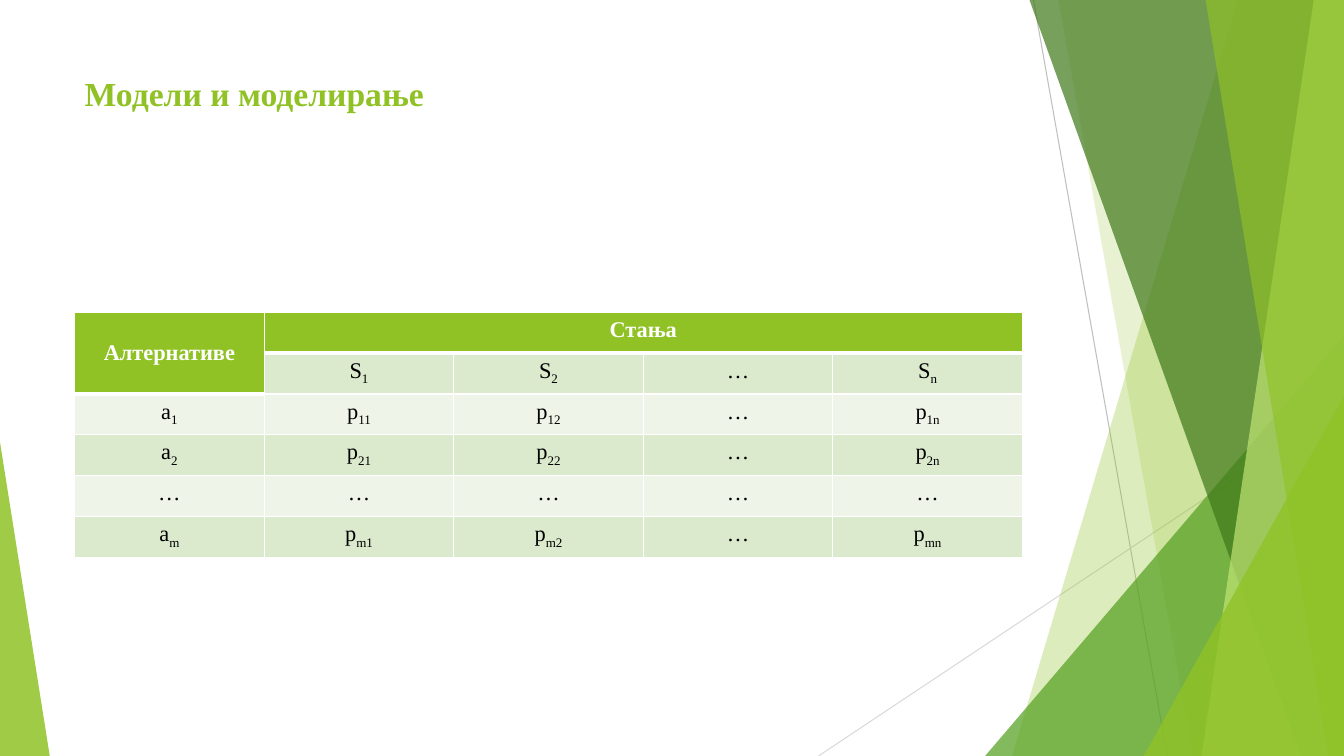
import pptx
import pptx.util
import pptx.dml.color
import pptx.enum.shapes
import pptx.enum.text
import pptx.oxml
import pptx.oxml.ns

RGBColor = pptx.dml.color.RGBColor
MSO_SHAPE = pptx.enum.shapes.MSO_SHAPE
PP_ALIGN = pptx.enum.text.PP_ALIGN
MSO_ANCHOR = pptx.enum.text.MSO_ANCHOR
Inches = pptx.util.Inches
Pt = pptx.util.Pt

LIME = RGBColor(0x90, 0xC2, 0x26)
PALE_LIME = RGBColor(0xC0, 0xE4, 0x74)
GREEN = RGBColor(0x54, 0xA0, 0x21)
DARK_GREEN = RGBColor(0x3F, 0x78, 0x19)
GREY = RGBColor(0xBF, 0xBF, 0xBF)
LIGHT_GREY = RGBColor(0xD9, 0xD9, 0xD9)
BAND_DARK = RGBColor(0xDB, 0xE9, 0xCD)
BAND_LIGHT = RGBColor(0xEE, 0xF4, 0xE8)
WHITE = RGBColor(0xFF, 0xFF, 0xFF)
BLACK = RGBColor(0, 0, 0)
FONT = "Times New Roman"

# An underscore separates a symbol from its index
PAYOFFS = [
    ["Алтернативе", "Стања", "", "", ""],
    ["", "S_1", "S_2", "…", "S_n"],
    ["а_1", "p_11", "p_12", "…", "p_1n"],
    ["а_2", "p_21", "p_22", "…", "p_2n"],
    ["…", "…", "…", "…", "…"],
    ["а_m", "p_m1", "p_m2", "…", "p_mn"],
]

# Decoration, in percent of the box
RAYS = [((76.9, 0), (86.85, 100), GREY), ((100, 53.7), (60.9, 100), LIGHT_GREY)]
BACK_BANDS = [(92.1, 75.3, LIME, 30), (78.75, 88.75, LIME, 20)]
FRONT_BANDS = [(76.6, 96.8, DARK_GREEN, 70), (97.75, 89.4, PALE_LIME, 70),
               (89.7, 98.85, LIME, 65)]


def subelement(parent, tag, **attributes):
    child = pptx.oxml.parse_xml(f"<{tag} {pptx.oxml.ns.nsdecls('a')}/>")
    for name, value in attributes.items():
        child.set(name, str(value))
    parent.append(child)
    return child


def paint(shape, color, opacity):
    shape.shadow.inherit = False
    shape.line.fill.background()
    shape.fill.solid()
    shape.fill.fore_color.rgb = color
    srgb = shape._element.spPr.find(".//" + pptx.oxml.ns.qn("a:srgbClr"))
    subelement(srgb, "a:alpha", val=opacity * 1000)


def add_text(paragraph, text, size, color, bold):
    """Write a symbol and, after an underscore, its index as a subscript."""
    for position, part in enumerate(text.split("_")):
        run = paragraph.add_run()
        run.text = part
        run.font.name = FONT
        run.font.size = Pt(size)
        run.font.bold = bold
        run.font.color.rgb = color
        if position:
            run._r.get_or_add_rPr().set("baseline", "-25000")


def draw_decoration(slide, left, top, width, height):
    def at(x, y):
        return int(left + width * x / 100), int(top + height * y / 100)

    def add_band(top_x, bottom_x, color, opacity):
        outline = slide.shapes.build_freeform(*at(top_x, 0), scale=1.0)
        outline.add_line_segments([at(100, 0), at(100, 100), at(bottom_x, 100)])
        paint(outline.convert_to_shape(), color, opacity)

    def add_corner(x, wide, high, apex, color, opacity):
        corner = slide.shapes.add_shape(
            MSO_SHAPE.ISOSCELES_TRIANGLE, *at(x, 100 - high),
            int(width * wide / 100), int(height * high / 100))
        corner.adjustments[0] = apex
        paint(corner, color, opacity)

    # Thin rays
    for start, end, color in RAYS:
        ray = slide.shapes.add_connector(
            pptx.enum.shapes.MSO_CONNECTOR.STRAIGHT, *at(*start), *at(*end))
        ray.line.color.rgb = color
        ray.line.width = Pt(0.75)
        subelement(ray._element.spPr, "a:effectLst")

    # Overlapping bands and corners
    for band in BACK_BANDS:
        add_band(*band)
    add_corner(73.3, 26.7, 55.6, 1, GREEN, 72)
    for band in FRONT_BANDS:
        add_band(*band)
    add_corner(85.1, 14.9, 47.6, 1, LIME, 80)
    add_corner(0, 3.7, 41.5, 0, LIME, 85)


def place_title(slide, text, left, top, width, height):
    title = slide.shapes.title
    slide.shapes._spTree.append(title._element)  # in front of the decoration
    title.left, title.top, title.width, title.height = left, top, width, height
    frame = title.text_frame
    frame.word_wrap = True
    frame.vertical_anchor = MSO_ANCHOR.TOP
    paragraph = frame.paragraphs[0]
    paragraph.alignment = PP_ALIGN.LEFT
    add_text(paragraph, text, 24, LIME, True)


def set_borders(cell, heavy_sides):
    properties = cell._tc.get_or_add_tcPr()
    for index, side in enumerate("LRTB"):
        width = Pt(3 if side in heavy_sides else 1)
        edge = subelement(properties, f"a:ln{side}", w=int(width))
        subelement(subelement(edge, "a:solidFill"), "a:srgbClr", val=WHITE)
        properties.insert(index, edge)


def add_payoff_table(slide, left, top, width, height):
    rows, columns = len(PAYOFFS), len(PAYOFFS[0])
    table = slide.shapes.add_table(rows, columns, left, top, width, height).table
    for column in table.columns:
        column.width = int(width / columns)
    for row in table.rows:
        row.height = int(height / rows)

    for r, texts in enumerate(PAYOFFS):
        for c, text in enumerate(texts):
            cell = table.cell(r, c)
            header_end = 1 if c == 0 else 0
            is_header = r <= header_end
            cell.fill.solid()
            cell.fill.fore_color.rgb = (
                LIME if is_header else BAND_DARK if r % 2 else BAND_LIGHT)
            set_borders(cell, "B" if is_header else
                        "T" if r == header_end + 1 else "")
            if text:
                paragraph = cell.text_frame.paragraphs[0]
                paragraph.alignment = PP_ALIGN.CENTER
                add_text(paragraph, text, 16,
                         WHITE if is_header else BLACK, is_header)

    # Joined headers
    table.cell(0, 0).merge(table.cell(1, 0))
    table.cell(0, 1).merge(table.cell(0, columns - 1))
    table.cell(0, 0).vertical_anchor = MSO_ANCHOR.MIDDLE


def main():
    deck = pptx.Presentation()
    deck.slide_width, deck.slide_height = Inches(13.33), Inches(7.5)
    slide = deck.slides.add_slide(deck.slide_layouts[5])
    margin, content_width = Inches(0.74), Inches(9.4)

    draw_decoration(slide, 0, 0, deck.slide_width, deck.slide_height)
    place_title(slide, "Модели и моделирање",
                margin, Inches(0.67), content_width, Inches(1.44))
    add_payoff_table(slide, margin, Inches(3.1), content_width, Inches(2.43))
    deck.save("out.pptx")


if __name__ == "__main__":
    main()
